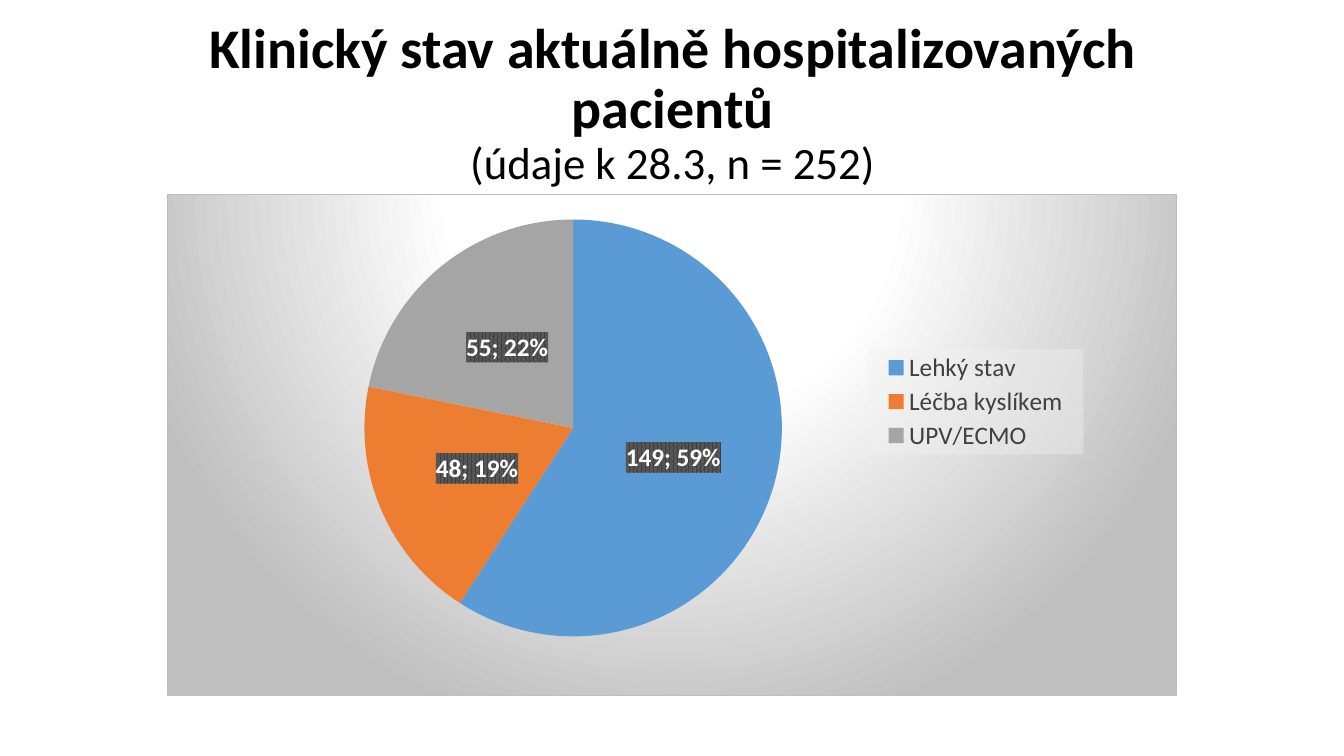
from dataclasses import dataclass

from lxml.etree import _Element as Element
from pptx import Presentation
from pptx.chart.chart import Chart
from pptx.chart.data import CategoryChartData
from pptx.dml.color import RGBColor
from pptx.enum.chart import XL_CHART_TYPE as ChartType
from pptx.enum.chart import XL_LABEL_POSITION as LabelPos
from pptx.enum.chart import XL_LEGEND_POSITION as LegendPos
from pptx.enum.text import MSO_ANCHOR as Anchor
from pptx.enum.text import MSO_AUTO_SIZE as AutoSize
from pptx.enum.text import PP_ALIGN as Align
from pptx.oxml import parse_xml
from pptx.oxml.ns import qn
from pptx.slide import Slide
from pptx.text.text import Font
from pptx.util import Emu, Inches, Pt

NS = (
    'xmlns:c="http://schemas.openxmlformats.org/drawingml/2006/chart" '
    'xmlns:a="http://schemas.openxmlformats.org/drawingml/2006/main"'
)
FACE = "Calibri"
WIDTH, HEIGHT = Inches(13.33), Inches(7.5)


@dataclass(frozen=True)
class Box:
    x: float
    y: float
    w: float
    h: float

    def on_slide(self) -> tuple[Emu, Emu, Emu, Emu]:
        return (
            Emu(int(self.x * WIDTH)),
            Emu(int(self.y * HEIGHT)),
            Emu(int(self.w * WIDTH)),
            Emu(int(self.h * HEIGHT)),
        )


@dataclass(frozen=True)
class Slice:
    name: str
    patients: int
    color: str


@dataclass(frozen=True)
class TitleRun:
    text: str
    size: int
    bold: bool


TITLE_BOX = Box(0.069, 0.043, 0.863, 0.214)
CHART_BOX = Box(0.1245, 0.257, 0.751, 0.664)
PIE_BOX = Box(0.195, 0, 0.414, 0.931)
LEGEND_BOX = Box(0.694, 0.308, 0.214, 0.21)

TITLE = [
    TitleRun("Klinický stav aktuálně hospitalizovaných pacientů", 40, True),
    TitleRun("(údaje k 28.3, n = 252)", 32, False),
]
SLICES = [
    Slice("Lehký stav", 149, "5B9BD5"),
    Slice("Léčba kyslíkem", 48, "ED7D31"),
    Slice("UPV/ECMO", 55, "A5A5A5"),
]


def rgb(color: str) -> RGBColor:
    return RGBColor.from_string(color)


def set_font(font: Font, size: int, color: str, bold: bool = False) -> None:
    font.name = FACE
    font.size = Pt(size)
    font.bold = bold
    font.color.rgb = rgb(color)


def clr(color: str, alpha: int = 100) -> str:
    return f'<a:srgbClr val="{color}"><a:alpha val="{alpha * 1000}"/></a:srgbClr>'


def sp_pr(inner: str) -> Element:
    return parse_xml(f"<c:spPr {NS}>{inner}</c:spPr>")


def set_layout(parent: Element, index: int, box: Box, target: str = "") -> None:
    for old in parent.findall(qn("c:layout")):
        parent.remove(old)
    parent.insert(index, parse_xml(
        f"<c:layout {NS}><c:manualLayout>{target}"
        '<c:xMode val="edge"/><c:yMode val="edge"/>'
        f'<c:x val="{box.x}"/><c:y val="{box.y}"/>'
        f'<c:w val="{box.w}"/><c:h val="{box.h}"/>'
        "</c:manualLayout></c:layout>"
    ))


def add_title(s: Slide) -> None:
    title = s.shapes.title
    title.left, title.top, title.width, title.height = TITLE_BOX.on_slide()
    tf = title.text_frame
    tf.text = "\v".join(run.text for run in TITLE)
    tf.word_wrap = True
    tf.auto_size = AutoSize.NONE
    tf.vertical_anchor = Anchor.BOTTOM
    p = tf.paragraphs[0]
    p.alignment = Align.CENTER
    p.line_spacing = 0.9
    for r, run in zip(p.runs, TITLE):
        set_font(r.font, run.size, "000000", run.bold)


def style_background(chart: Chart) -> None:
    stops = "".join(
        f'<a:gs pos="{pos * 1000}">{clr(color)}</a:gs>'
        for pos, color in [(0, "FFFFFF"), (39, "FFFFFF"), (100, "BFBFBF")]
    )
    chart.element.find(qn("c:chart")).addnext(sp_pr(
        f'<a:gradFill><a:gsLst>{stops}</a:gsLst><a:path path="circle">'
        '<a:fillToRect l="50000" t="-80000" r="50000" b="180000"/>'
        "</a:path></a:gradFill>"
        f'<a:ln w="{Pt(0.75)}"><a:solidFill>{clr("BFBFBF")}</a:solidFill></a:ln>'
    ))


def style_legend(chart: Chart) -> None:
    chart.has_legend = True
    legend = chart.legend
    legend.position = LegendPos.RIGHT
    legend.include_in_layout = False
    set_font(legend.font, 18, "404040")
    node = chart.element.find(".//" + qn("c:legend"))
    set_layout(node, 1, LEGEND_BOX)
    node.find(qn("c:txPr")).addprevious(
        sp_pr(f'<a:solidFill>{clr("F2F2F2", 39)}</a:solidFill>')
    )


def style_pie(chart: Chart) -> None:
    plot = chart.plots[0]
    plot.vary_by_categories = True
    series = plot.series[0]
    for i, part in enumerate(SLICES):
        fill = series.points[i].format.fill
        fill.solid()
        fill.fore_color.rgb = rgb(part.color)
    labels = series.data_labels
    labels.show_value = True
    labels.show_percentage = True
    labels.position = LabelPos.CENTER
    set_font(labels.font, 18, "FFFFFF", True)
    node = chart.element.find(".//" + qn("c:ser")).find(qn("c:dLbls"))
    node.find(qn("c:txPr")).addprevious(sp_pr(
        f'<a:pattFill prst="pct75"><a:fgClr>{clr("404040")}</a:fgClr>'
        f'<a:bgClr>{clr("595959")}</a:bgClr></a:pattFill>'
    ))
    flags = [child for child in node if child.tag.startswith(qn("c:show"))]
    last = [flag for flag in flags if flag.tag != qn("c:showLeaderLines")][-1]
    last.addnext(parse_xml(f"<c:separator {NS}>; </c:separator>"))


def add_pie(s: Slide) -> None:
    data = CategoryChartData()
    data.categories = [part.name for part in SLICES]
    data.add_series("Series 1", [part.patients for part in SLICES])
    chart = s.shapes.add_chart(ChartType.PIE, *CHART_BOX.on_slide(), data).chart
    chart.has_title = False
    set_font(chart.font, 10, "000000")
    area = chart.element.find(".//" + qn("c:plotArea"))
    set_layout(area, 0, PIE_BOX, '<c:layoutTarget val="inner"/>')
    style_background(chart)
    style_legend(chart)
    style_pie(chart)


def main() -> None:
    prs = Presentation()
    prs.slide_width, prs.slide_height = WIDTH, HEIGHT
    s = prs.slides.add_slide(prs.slide_layouts[5])
    add_title(s)
    add_pie(s)
    prs.save("out.pptx")


if __name__ == "__main__":
    main()
